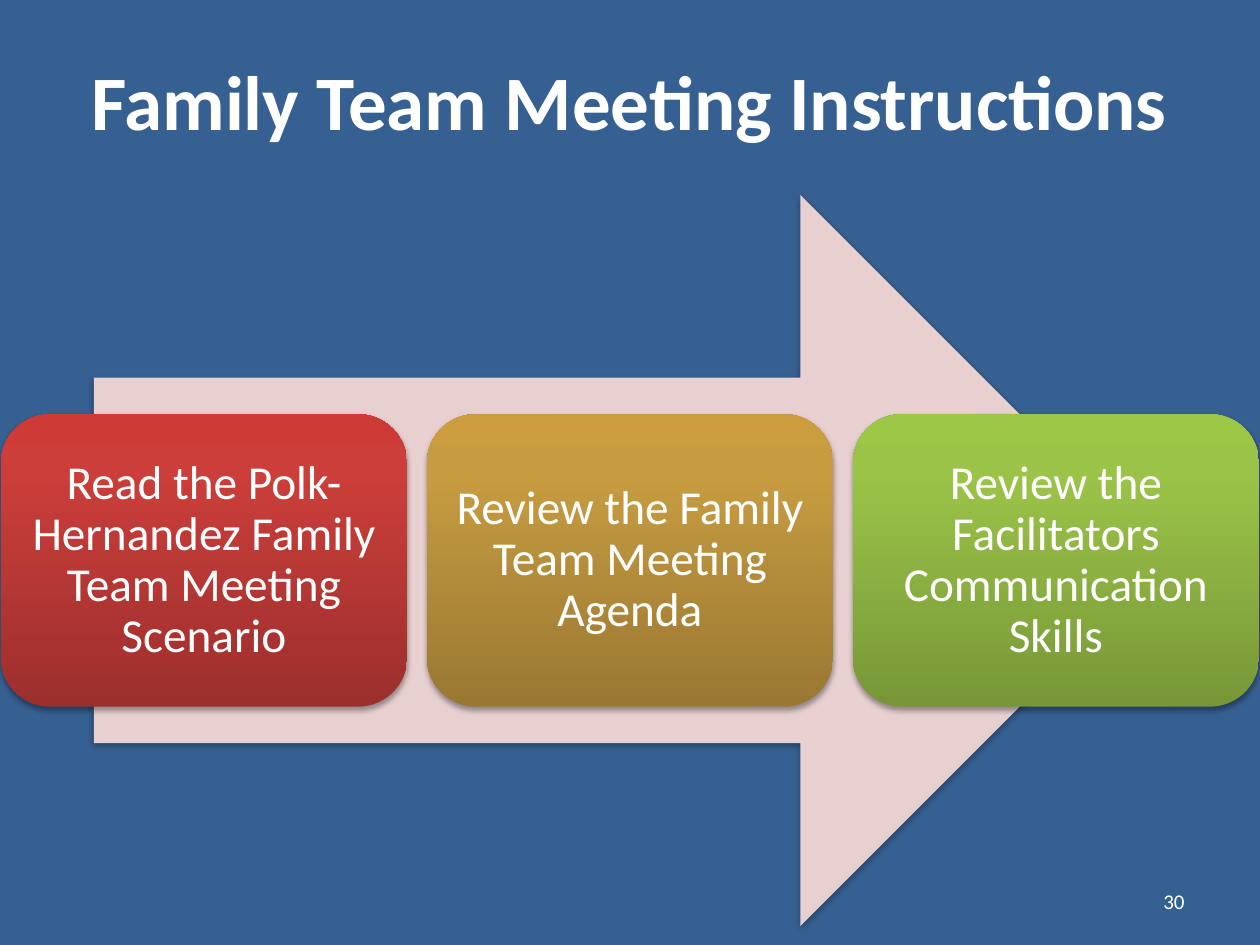
from copy import deepcopy

from lxml.etree import SubElement
from pptx import Presentation
from pptx.dml.color import RGBColor
from pptx.enum.shapes import MSO_SHAPE as Preset
from pptx.enum.text import MSO_ANCHOR as Anchor, PP_ALIGN as Align
from pptx.oxml.ns import qn
from pptx.util import Emu, Pt

PX_PER_INCH = 126
WHITE = "FFFFFF"
STOP_POSITIONS = (0, 0.8, 1)
STEPS = [
    ("Read the Polk-Hernandez Family Team Meeting Scenario",
     ("9C2F2D", "CB3E3A", "CE3B37")),
    ("Review the Family Team Meeting Agenda",
     ("997832", "C79C41", "CB9D3F")),
    ("Review the Facilitators Communication Skills",
     ("779737", "9BC348", "9DC746")),
]


def px(length):
    return Emu(round(length * 914400 / PX_PER_INCH))


def color(value):
    return RGBColor.from_string(value)


def add_soft_shadow(shape):
    shape.shadow.inherit = False
    effects = shape._element.spPr.find(qn("a:effectLst"))
    shadow = SubElement(effects, qn("a:outerShdw"), blurRad=str(Pt(3.1)),
                        dist=str(Pt(1.8)), dir="5400000", rotWithShape="0")
    black = SubElement(shadow, qn("a:srgbClr"), val="000000")
    SubElement(black, qn("a:alpha"), val="35000")


def fill_gradient(shape, colors):
    shape.fill.gradient()
    shape.fill.gradient_angle = 90
    stop_list = shape._element.spPr.find(".//" + qn("a:gsLst"))
    stop_list.append(deepcopy(stop_list[-1]))
    for stop, position, value in zip(shape.fill.gradient_stops, STOP_POSITIONS, colors):
        stop.position = position
        stop.color.rgb = color(value)


def write_text(shape, text, size, align, bold=False):
    frame = shape.text_frame
    frame.word_wrap = True
    frame.vertical_anchor = Anchor.MIDDLE
    para = frame.paragraphs[0]
    para.text = text
    para.alignment = align
    para.font.name = "Calibri"
    para.font.size = Pt(size)
    para.font.bold = bold
    para.font.color.rgb = color(WHITE)
    return frame


def add_label(page, box, text, size, align, bold=False):
    label = page.shapes.add_textbox(*map(px, box))
    write_text(label, text, size, align, bold)


def add_step(page, box, text, colors):
    card = page.shapes.add_shape(Preset.ROUNDED_RECTANGLE, *map(px, box))
    fill_gradient(card, colors)
    card.line.fill.background()
    add_soft_shadow(card)
    frame = write_text(card, text, 27, Align.CENTER)
    frame.paragraphs[0].line_spacing = 0.9
    frame.margin_left = frame.margin_right = px(14)
    frame.margin_top = frame.margin_bottom = px(14)


def add_process(page, box):
    left, top, width, height = box
    inset = 93
    arrow = page.shapes.add_shape(
        Preset.RIGHT_ARROW, *map(px, (left + inset, top, width - 2 * inset, height)))
    arrow.fill.solid()
    arrow.fill.fore_color.rgb = color("E8D0D0")
    arrow.line.fill.background()
    add_soft_shadow(arrow)

    gap = 20
    card_width = (width - gap * (len(STEPS) - 1)) / len(STEPS)
    card_height = height * 0.4
    card_top = top + (height - card_height) / 2
    for index, (text, colors) in enumerate(STEPS):
        card_left = left + index * (card_width + gap)
        add_step(page, (card_left, card_top, card_width, card_height), text, colors)


def main():
    deck = Presentation()
    deck.slide_width, deck.slide_height = px(1260), px(945)
    page = deck.slides.add_slide(deck.slide_layouts[6])
    page.background.fill.solid()
    page.background.fill.fore_color.rgb = color("376092")

    add_label(page, (0, 21, 1260, 158), "Family Team Meeting Instructions",
              44, Align.CENTER, bold=True)
    add_process(page, (1, 195, 1258, 731))
    add_label(page, (903, 876, 294, 50), "30", 12, Align.RIGHT)
    deck.save("out.pptx")


if __name__ == "__main__":
    main()
